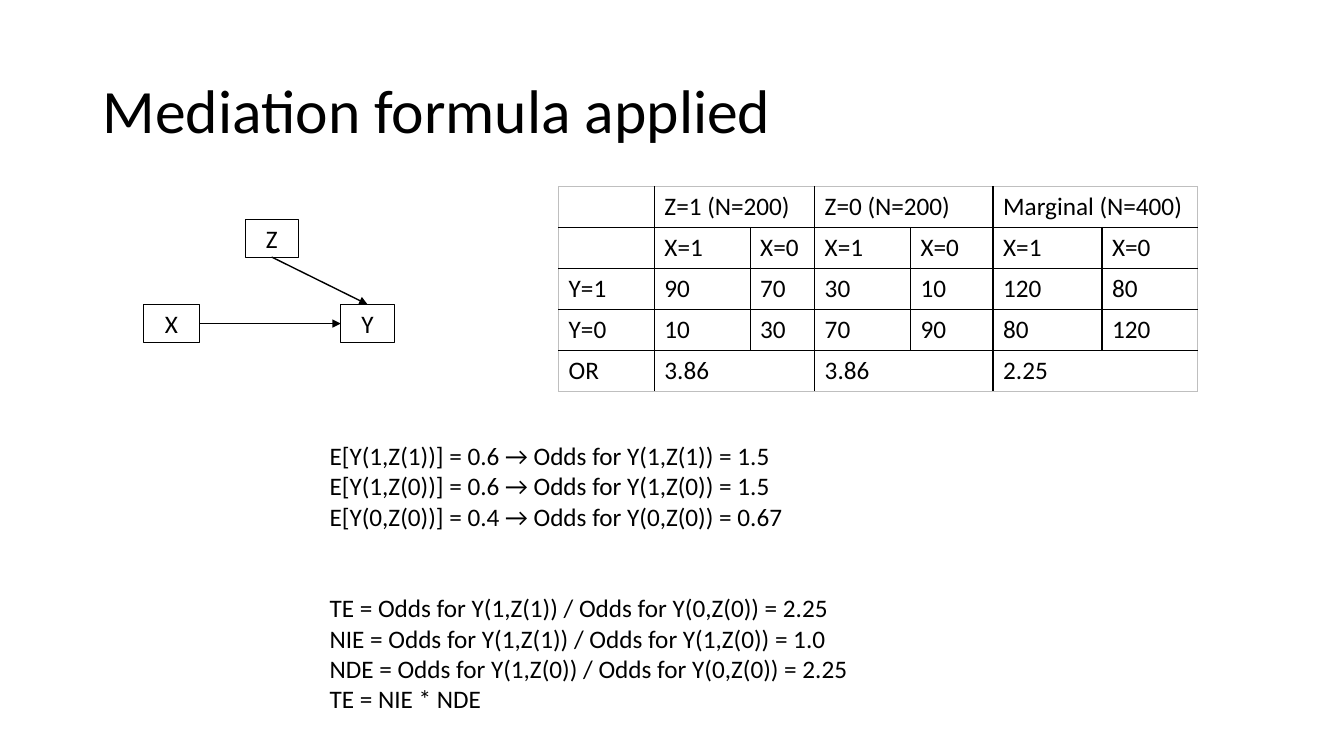
from dataclasses import dataclass

from lxml.etree import SubElement
from pptx import Presentation
from pptx.dml.color import RGBColor
from pptx.enum.shapes import MSO_CONNECTOR, MSO_SHAPE
from pptx.enum.text import MSO_ANCHOR, MSO_AUTO_SIZE, PP_ALIGN
from pptx.oxml import parse_xml
from pptx.oxml.ns import nsdecls, qn
from pptx.util import Inches, Pt

FONT = "Calibri"
BLACK = "000000"
EDGE_GRAY = "BFBFBF"
TOP, LEFT, BOTTOM, RIGHT = range(4)


@dataclass(frozen=True)
class Node:
    name: str
    x: float
    y: float
    w: float
    h: float


@dataclass(frozen=True)
class Arrow:
    source: str
    source_site: int
    target: str
    target_site: int


NODES = [
    Node("X", 1.42, 3.02, 0.56, 0.38),
    Node("Z", 2.43, 2.18, 0.53, 0.37),
    Node("Y", 3.38, 3.02, 0.53, 0.38),
]
ARROWS = [Arrow("X", RIGHT, "Y", LEFT), Arrow("Z", BOTTOM, "Y", TOP)]

COLUMN_WIDTHS = [0.95, 0.95, 0.64, 0.95, 0.82, 1.08, 0.95]
ROW_HEIGHT = 0.406
COUNTS = [
    ["", "Z=1 (N=200)", None, "Z=0 (N=200)", None, "Marginal (N=400)", None],
    ["", *["X=1", "X=0"] * 3],
    ["Y=1", "90", "70", "30", "10", "120", "80"],
    ["Y=0", "10", "30", "70", "90", "80", "120"],
    ["OR", "3.86", None, "3.86", None, "2.25", None],
]

ODDS = [
    "E[Y(1,Z(1))] = 0.6 → Odds for Y(1,Z(1)) = 1.5",
    "E[Y(1,Z(0))] = 0.6 → Odds for Y(1,Z(0)) = 1.5",
    "E[Y(0,Z(0))] = 0.4 → Odds for Y(0,Z(0)) = 0.67",
]
EFFECTS = [
    "TE = Odds for Y(1,Z(1)) / Odds for Y(0,Z(0)) = 2.25",
    "NIE = Odds for Y(1,Z(1)) / Odds for Y(1,Z(0)) = 1.0",
    "NDE = Odds for Y(1,Z(0)) / Odds for Y(0,Z(0)) = 2.25",
    "TE = NIE * NDE",
]


def color(value: str) -> RGBColor:
    return RGBColor.from_string(value)


def style_text(tf, size: float = 18) -> None:
    for p in tf.paragraphs:
        p.font.size = Pt(size)
        for r in p.runs:
            r.font.name = FONT
            r.font.size = Pt(size)
            r.font.color.rgb = color(BLACK)


def add_text(s, x: float, y: float, w: float, h: float, lines: list[str], size: float):
    tf = s.shapes.add_textbox(Inches(x), Inches(y), Inches(w), Inches(h)).text_frame
    tf.word_wrap = True
    tf.text = "\n".join(lines)
    style_text(tf, size)
    return tf


def add_node(group, node: Node):
    sp = group.shapes.add_shape(
        MSO_SHAPE.RECTANGLE, Inches(node.x), Inches(node.y), Inches(node.w), Inches(node.h)
    )
    sp.shadow.inherit = False
    sp.fill.background()
    sp.line.color.rgb = color(BLACK)
    sp.line.width = Pt(0.5)
    tf = sp.text_frame
    tf.text = node.name
    tf.vertical_anchor = MSO_ANCHOR.MIDDLE
    tf.paragraphs[0].alignment = PP_ALIGN.CENTER
    style_text(tf)
    return sp


def add_arrow(group, arrow: Arrow, boxes: dict) -> None:
    source, target = boxes[arrow.source], boxes[arrow.target]
    line = group.shapes.add_connector(
        MSO_CONNECTOR.STRAIGHT, source.left, source.top, target.left, target.top
    )
    line.begin_connect(source, arrow.source_site)
    line.end_connect(target, arrow.target_site)
    line.line.color.rgb = color(BLACK)
    line.line.width = Pt(1)
    SubElement(line.line._get_or_add_ln(), qn("a:tailEnd"), type="triangle")
    SubElement(line._element.spPr, qn("a:effectLst"))


def set_borders(cell, outer: dict[str, bool]) -> None:
    tc_pr = cell._tc.get_or_add_tcPr()
    for i, (side, is_outer) in enumerate(outer.items()):
        width = Pt(0.5 if is_outer else 1)
        tint = EDGE_GRAY if is_outer else BLACK
        tc_pr.insert(i, parse_xml(
            f'<a:ln{side} {nsdecls("a")} w="{width}"><a:solidFill>'
            f'<a:srgbClr val="{tint}"/></a:solidFill></a:ln{side}>'
        ))


def add_counts_table(s, x: float, y: float) -> None:
    rows, cols = len(COUNTS), len(COLUMN_WIDTHS)
    table = s.shapes.add_table(
        rows, cols, Inches(x), Inches(y),
        Inches(sum(COLUMN_WIDTHS)), Inches(rows * ROW_HEIGHT),
    ).table
    table.first_row = False
    table.horz_banding = False
    for column, width in zip(table.columns, COLUMN_WIDTHS):
        column.width = Inches(width)
    for i, values in enumerate(COUNTS):
        table.rows[i].height = Inches(ROW_HEIGHT)
        for j, value in enumerate(values):
            cell = table.cell(i, j)
            cell.fill.background()
            if value is None:
                continue
            if j + 1 < cols and values[j + 1] is None:
                cell.merge(table.cell(i, j + 1))
            last = j + (cell.span_width if cell.is_merge_origin else 1)
            set_borders(cell, {"L": j == 0, "R": last == cols, "T": i == 0, "B": i + 1 == rows})
            cell.text_frame.text = value
            style_text(cell.text_frame)


def main() -> None:
    prs = Presentation()
    prs.slide_width, prs.slide_height = Inches(13.33), Inches(7.5)
    s = prs.slides.add_slide(prs.slide_layouts[6])

    title = add_text(s, 0.92, 0.4, 11.5, 1.45, ["Mediation formula applied"], 44)
    title.vertical_anchor = MSO_ANCHOR.MIDDLE
    title.paragraphs[0].line_spacing = 0.9

    add_counts_table(s, 5.54, 1.85)

    group = s.shapes.add_group_shape()
    boxes = {node.name: add_node(group, node) for node in NODES}
    for arrow in ARROWS:
        add_arrow(group, arrow, boxes)

    formulas = add_text(s, 3.17, 4.32, 6.78, 2.83, ODDS + EFFECTS, 18)
    formulas.auto_size = MSO_AUTO_SIZE.SHAPE_TO_FIT_TEXT
    formulas.paragraphs[len(ODDS)].space_before = Pt(44)

    prs.save("out.pptx")


if __name__ == "__main__":
    main()
